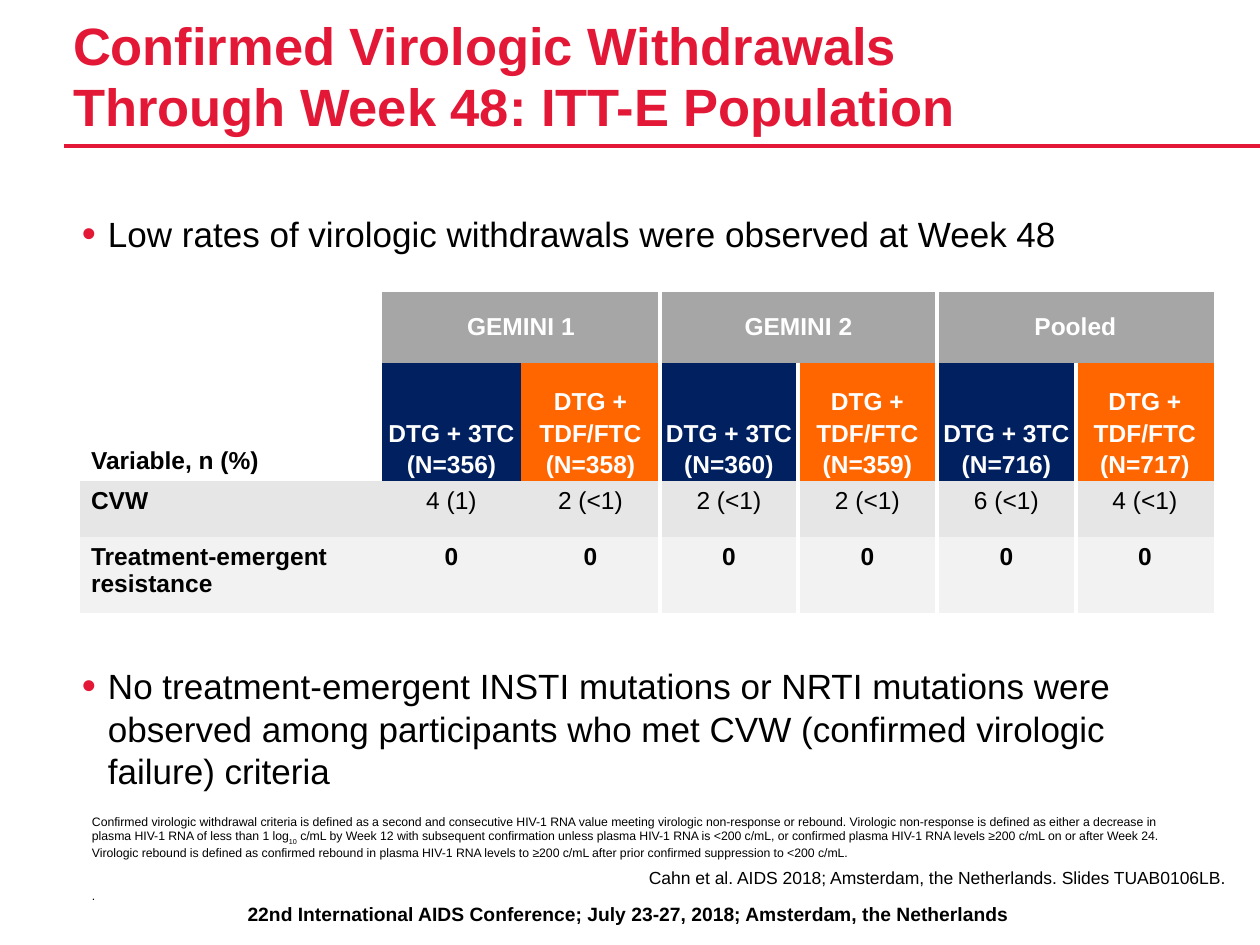
"""Build the Week 48 virologic withdrawals slide."""
from lxml.etree import SubElement
from pptx import Presentation
from pptx.dml.color import RGBColor
from pptx.enum.shapes import MSO_CONNECTOR
from pptx.enum.text import MSO_ANCHOR, PP_ALIGN
from pptx.oxml import parse_xml
from pptx.oxml.ns import nsdecls, qn
from pptx.util import Emu, Pt

RED, BLACK, WHITE = "E31836", "000000", "FFFFFF"
GRAY, NAVY, ORANGE = "A6A6A6", "002060", "FF6600"
NO_GRID_STYLE = "{2D5ABB26-0587-4C30-8999-92F81FD0307C}"


def px(length):
    return Emu(round(length * 914400 / 126))


def color(value):
    return RGBColor.from_string(value)


def add_bullet(paragraph):
    properties = paragraph._p.get_or_add_pPr()
    properties.set("marL", str(px(26)))
    properties.set("indent", str(-px(26)))
    tint = SubElement(properties, qn("a:buClr"))
    SubElement(tint, qn("a:srgbClr")).set("val", RED)
    SubElement(properties, qn("a:buSzPct")).set("val", "115000")
    SubElement(properties, qn("a:buFont")).set("typeface", "Arial")
    SubElement(properties, qn("a:buChar")).set("char", "•")


def write(frame, text, size=14, ink=BLACK, bold=False, align=PP_ALIGN.LEFT,
          spacing=None, before=None, after=None, indent=0, bullet=False):
    paragraph = frame.add_paragraph() if frame.text else frame.paragraphs[0]
    if bullet:
        add_bullet(paragraph)
    elif indent:
        paragraph._p.get_or_add_pPr().set("marL", str(px(indent)))
    paragraph.alignment = align
    paragraph.line_spacing = spacing
    paragraph.space_before = before
    paragraph.space_after = after
    for row, line in enumerate(text.split("\n")):
        if row:
            paragraph.add_line_break()
        for position, part in enumerate(line.split("~")):
            run = paragraph.add_run()
            run.text = part
            run.font.name = "Arial"
            run.font.size = Pt(size)
            run.font.bold = bold
            run.font.color.rgb = color(ink)
            if position % 2:
                run._r.get_or_add_rPr().set("baseline", "-25000")


class SlideBuilder:
    def __init__(self, slide):
        self.slide = slide

    def rule(self, left, top, right):
        line = self.slide.shapes.add_connector(
            MSO_CONNECTOR.STRAIGHT, px(left), px(top), px(right), px(top))
        line.line.color.rgb = color(RED)
        line.line.width = Pt(2)
        SubElement(line._element.spPr, qn("a:effectLst"))

    def text(self, left, top, width, height, content, inset=0,
             anchor=MSO_ANCHOR.TOP, **style):
        box = self.slide.shapes.add_textbox(px(left), px(top), px(width), px(height))
        frame = box.text_frame
        frame.word_wrap = True
        frame.vertical_anchor = anchor
        frame.margin_left = frame.margin_right = px(inset)
        frame.margin_top = frame.margin_bottom = px(inset // 2)
        write(frame, content, **style)
        return frame

    def table(self, left, top, widths, heights):
        graphic = self.slide.shapes.add_table(
            len(heights), len(widths), px(left), px(top), px(sum(widths)), px(sum(heights)))
        grid = graphic.table
        grid.first_row = grid.horz_banding = False
        graphic._element.xpath(".//a:tableStyleId")[0].text = NO_GRID_STYLE
        for column, width in zip(grid.columns, widths):
            column.width = px(width)
        for row, height in zip(grid.rows, heights):
            row.height = px(height)
        return grid

    def cell(self, cell, fill, content="", margins=(1, 6), anchor=MSO_ANCHOR.TOP,
             edges=(), **style):
        cell.fill.solid()
        cell.fill.fore_color.rgb = color(fill)
        cell.margin_left = cell.margin_right = px(margins[0])
        cell.margin_top = cell.margin_bottom = px(margins[1])
        cell.vertical_anchor = anchor
        for edge in edges:
            cell._tc.get_or_add_tcPr().insert(0, parse_xml(
                f'<a:ln{edge} {nsdecls("a")} w="{Pt(2.25)}"><a:solidFill>'
                f'<a:srgbClr val="{WHITE}"/></a:solidFill></a:ln{edge}>'))
        if content:
            write(cell.text_frame, content, **style)


def add_results(builder):
    studies = ["GEMINI 1", "GEMINI 2", "Pooled"]
    sizes = [356, 358, 360, 359, 716, 717]
    results = [
        ("CVW", ["4 (1)", "2 (<1)", "2 (<1)", "2 (<1)", "6 (<1)", "4 (<1)"], "E6E6E6", False),
        ("Treatment-emergent resistance", ["0"] * 6, "F2F2F2", True),
    ]
    edges = [(), (), "R", "L", "R", "L", ()]
    center = PP_ALIGN.CENTER
    grid = builder.table(80, 292, [302] + [139, 139, 138] * 2, [71, 118, 56, 76])

    builder.cell(grid.cell(0, 0), WHITE)
    for index, study in enumerate(studies):
        first = 1 + 2 * index
        study_cell = grid.cell(0, first)
        study_cell.merge(grid.cell(0, first + 1))
        builder.cell(study_cell, GRAY, study, (1, 8), MSO_ANCHOR.MIDDLE,
                     edges=["R", "RL", "L"][index], ink=WHITE, bold=True, align=center)
        builder.cell(grid.cell(0, first + 1), GRAY, edges=edges[first + 1])

    builder.cell(grid.cell(1, 0), WHITE, "Variable, n (%)", anchor=MSO_ANCHOR.BOTTOM,
                 bold=True, indent=10)
    for column, size in enumerate(sizes, 1):
        regimen, fill = ("DTG + 3TC", NAVY) if column % 2 else ("DTG + TDF/FTC", ORANGE)
        builder.cell(grid.cell(1, column), fill, f"{regimen}\n(N={size})", (2, 2),
                     MSO_ANCHOR.BOTTOM, edges[column], ink=WHITE, bold=True,
                     align=center, spacing=1.15)

    for row, (variable, values, fill, bold) in enumerate(results, 2):
        builder.cell(grid.cell(row, 0), fill, variable, bold=True, indent=10)
        for column, value in enumerate(values, 1):
            builder.cell(grid.cell(row, column), fill, value, edges=edges[column],
                         bold=bold, align=center)


def main():
    presentation = Presentation()
    presentation.slide_width, presentation.slide_height = px(1260), px(945)
    builder = SlideBuilder(presentation.slides.add_slide(presentation.slide_layouts[6]))

    builder.rule(64, 146, 1260)
    builder.text(8, 896, 1241, 37,
                 "22nd International AIDS Conference; July 23-27, 2018; Amsterdam, the Netherlands",
                 inset=12, size=11, bold=True, align=PP_ALIGN.CENTER)
    builder.text(73, 21, 1040, 116,
                 "Confirmed Virologic Withdrawals Through Week 48: ITT-E Population",
                 anchor=MSO_ANCHOR.BOTTOM, size=30, ink=RED, bold=True, spacing=Pt(35))
    add_results(builder)

    findings = [
        (213, "Low rates of virologic withdrawals were observed at Week 48"),
        (665, "No treatment-emergent INSTI mutations or NRTI mutations were observed among "
              "participants who met CVW (confirmed virologic failure) criteria"),
    ]
    for top, finding in findings:
        builder.text(82, top, 1065, 52, finding, size=20, after=Pt(5), bullet=True)

    builder.text(73, 867, 1152, 25,
                 "Cahn et al. AIDS 2018; Amsterdam, the Netherlands. Slides TUAB0106LB.",
                 size=10, align=PP_ALIGN.RIGHT, after=Pt(3))
    footnote = builder.text(
        92, 814, 1082, 47,
        "Confirmed virologic withdrawal criteria is defined as a second and consecutive HIV-1 RNA "
        "value meeting virologic non-response or rebound. Virologic non-response is defined as "
        "either a decrease in plasma HIV-1 RNA of less than 1 log~10~ c/mL by Week 12 with "
        "subsequent confirmation unless plasma HIV-1 RNA is <200 c/mL, or confirmed plasma HIV-1 "
        "RNA levels ≥200 c/mL on or after Week 24. Virologic rebound is defined as confirmed "
        "rebound in plasma HIV-1 RNA levels to ≥200 c/mL after prior confirmed suppression to "
        "<200 c/mL.", size=7, after=Pt(3))
    write(footnote, ".", size=7, before=Pt(13), after=Pt(3))
    presentation.save("out.pptx")


if __name__ == "__main__":
    main()
